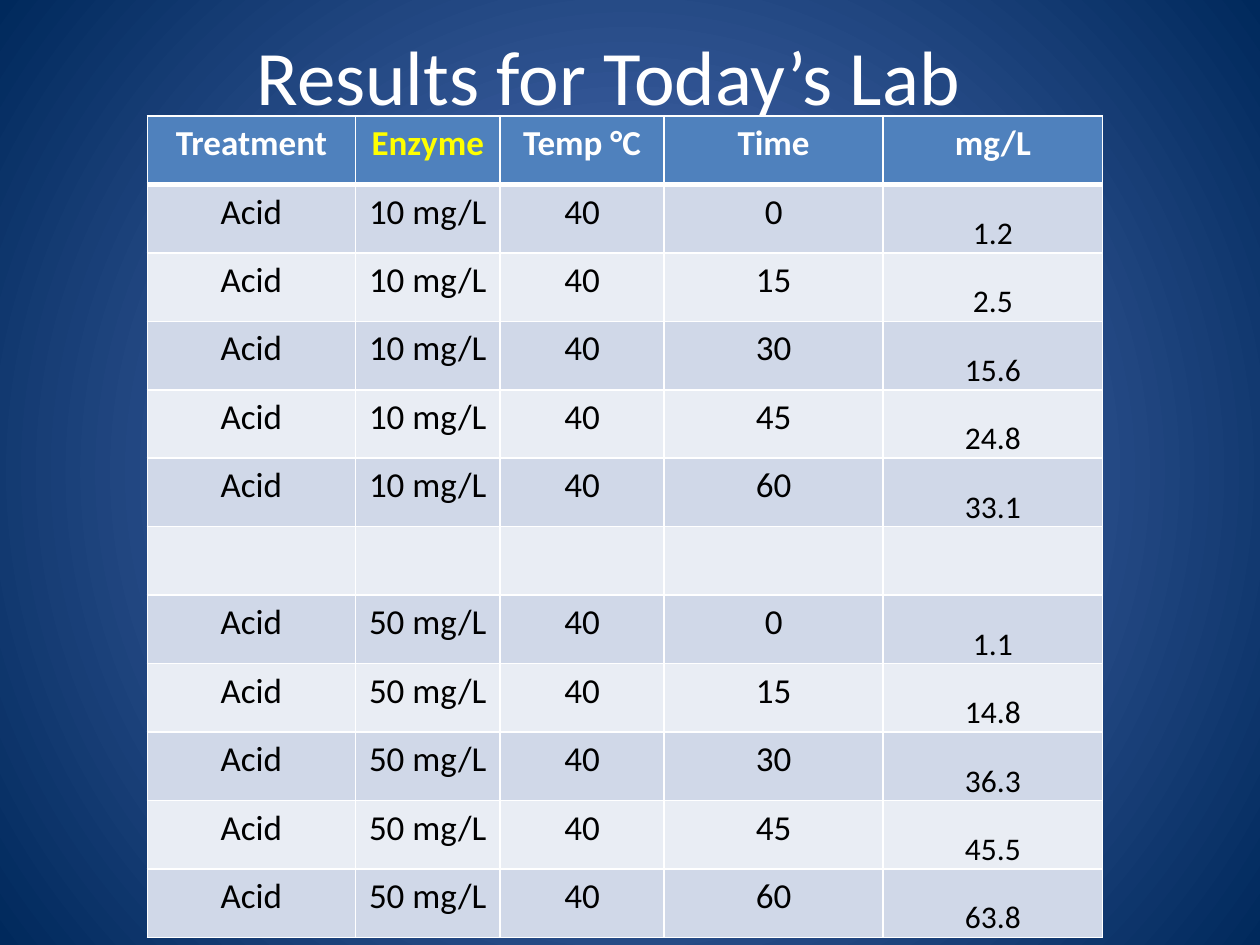
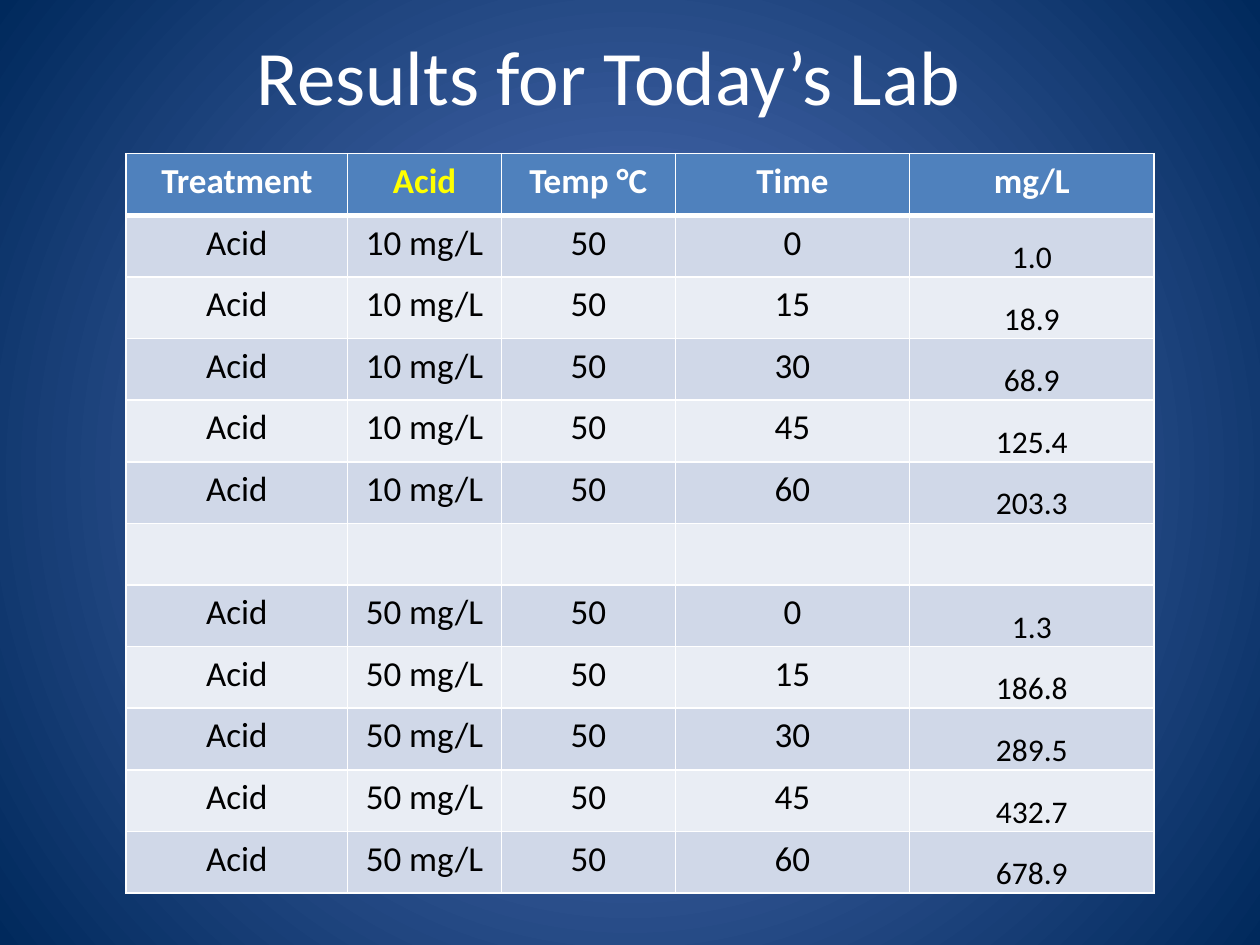
from dataclasses import dataclass

from lxml import etree
from pptx import Presentation
from pptx.dml.color import RGBColor
from pptx.enum.text import MSO_ANCHOR, PP_ALIGN
from pptx.oxml.ns import qn
from pptx.util import Inches, Pt

CENTER = PP_ALIGN.CENTER
MIDDLE = MSO_ANCHOR.MIDDLE
BOTTOM = MSO_ANCHOR.BOTTOM


@dataclass(frozen=True)
class Theme:
    font: str = "Calibri"
    glow: str = "5E7CC5"
    navy: str = "00295C"
    white: str = "FFFFFF"
    black: str = "000000"
    yellow: str = "FFFF00"
    header: str = "4F81BD"
    bands: tuple = ("D0D8E8", "E9EDF4")
    title_size: int = 44
    cell_size: int = 20
    reading_size: int = 18
    thin: int = 1
    thick: int = 3


THEME = Theme()
TITLE = "Results for Today’s Lab"
DOSES = ["10 mg/L", "50 mg/L"]
TIMES = ["0", "15", "30", "45", "60"]

LABS = [
    {
        "factor": "Enzyme", "temperature": "40",
        "left": 1.17, "top": 0.92, "height": 6.52,
        "columns": [1.65, 1.15, 1.3, 1.74, 1.74],
        "readings": [["1.2", "2.5", "15.6", "24.8", "33.1"],
                     ["1.1", "14.8", "36.3", "45.5", "63.8"]],
    },
    {
        "factor": "Acid", "temperature": "50",
        "left": 1, "top": 1.22, "height": 5.87,
        "columns": [1.76, 1.22, 1.38, 1.86, 1.94],
        "readings": [["1.0", "18.9", "68.9", "125.4", "203.3"],
                     ["1.3", "186.8", "289.5", "432.7", "678.9"]],
    },
]


def style_paragraph(para, text, size, color, bold=False):
    para.text = text
    para.alignment = CENTER
    para.font.name = THEME.font
    para.font.size = Pt(size)
    para.font.bold = bold
    para.font.color.rgb = RGBColor.from_string(color)


def paint_cell(cell, fill, top_width, bottom_width):
    properties = cell._tc.get_or_add_tcPr()
    widths = {"a:lnL": THEME.thin, "a:lnR": THEME.thin,
              "a:lnT": top_width, "a:lnB": bottom_width}
    for side, width in widths.items():
        line = etree.SubElement(properties, qn(side), w=str(Pt(width)))
        solid = etree.SubElement(line, qn("a:solidFill"))
        etree.SubElement(solid, qn("a:srgbClr"), val=THEME.white)
    cell.fill.solid()
    cell.fill.fore_color.rgb = RGBColor.from_string(fill)


deck = Presentation()
deck.slide_width = Inches(10)
deck.slide_height = Inches(7.5)
blank = deck.slide_layouts[6]

master = deck.slide_master
backdrop = master.background.fill
backdrop.gradient()
for stop, color in zip(backdrop.gradient_stops, [THEME.glow, THEME.navy]):
    stop.color.rgb = RGBColor.from_string(color)
gradient = master.element.find(".//" + qn("a:gradFill"))
gradient.remove(gradient.find(qn("a:lin")))
circle = etree.SubElement(gradient, qn("a:path"), path="circle")
etree.SubElement(circle, qn("a:fillToRect"), l="50000", t="50000", r="50000", b="50000")

for lab in LABS:
    page = deck.slides.add_slide(blank)

    title = page.shapes.add_textbox(Inches(0.33), Inches(-0.03), Inches(9), Inches(1.25))
    title.text_frame.word_wrap = True
    title.text_frame.vertical_anchor = MIDDLE
    style_paragraph(title.text_frame.paragraphs[0], TITLE, THEME.title_size, THEME.white)

    headings = ["Treatment", lab["factor"], "Temp °C", "Time", "mg/L"]
    groups = [
        [["Acid", dose, lab["temperature"], time, reading]
         for time, reading in zip(TIMES, readings)]
        for dose, readings in zip(DOSES, lab["readings"])
    ]
    rows = [headings, *groups[0], [""] * len(headings), *groups[1]]

    frame = page.shapes.add_table(
        len(rows), len(headings), Inches(lab["left"]), Inches(lab["top"]),
        Inches(sum(lab["columns"])), Inches(lab["height"]))
    table = frame.table
    for column, width in zip(table.columns, lab["columns"]):
        column.width = Inches(width)

    for row_index, row in enumerate(rows):
        is_header = row_index == 0
        fill = THEME.header if is_header else THEME.bands[(row_index - 1) % 2]
        top_width = THEME.thick if row_index == 1 else THEME.thin
        bottom_width = THEME.thick if is_header else THEME.thin
        for column_index, text in enumerate(row):
            cell = table.cell(row_index, column_index)
            paint_cell(cell, fill, top_width, bottom_width)
            if not text:
                continue
            size, color = THEME.cell_size, THEME.black
            if is_header:
                color = THEME.yellow if column_index == 1 else THEME.white
            elif column_index == len(headings) - 1:
                size = THEME.reading_size
                cell.vertical_anchor = BOTTOM
                cell.margin_left = cell.margin_right = cell.margin_top = Inches(0.01)
                cell.margin_bottom = 0
            style_paragraph(cell.text_frame.paragraphs[0], text, size, color, is_header)

deck.save("out.pptx")
